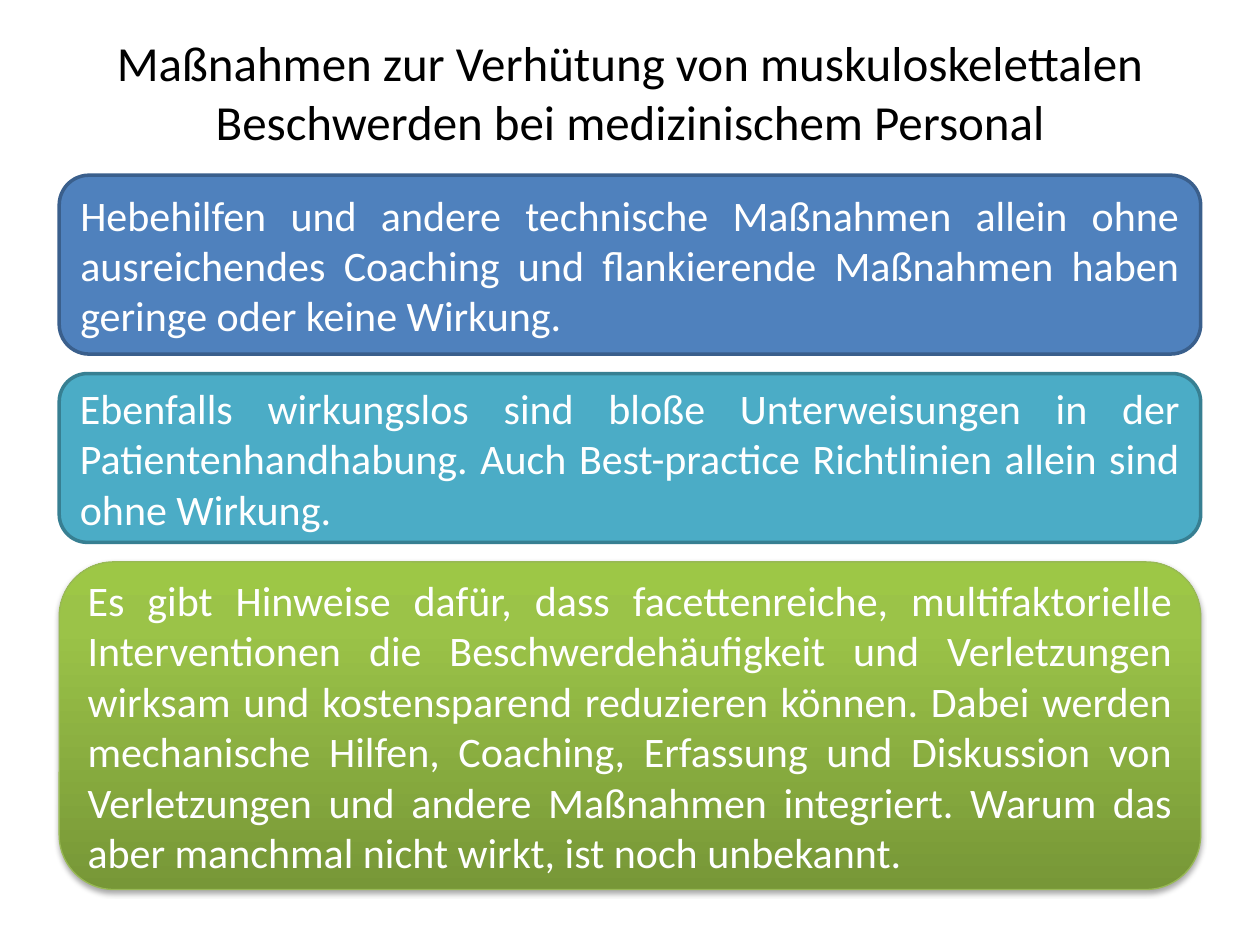
import pptx
import pptx.util
import pptx.dml.color
import pptx.enum.shapes
import pptx.enum.text
import pptx.oxml
import pptx.oxml.ns
from pptx.util import Inches

# Content
TITLE = "Maßnahmen zur Verhütung von muskuloskelettalen Beschwerden bei medizinischem Personal"
PANELS = [
    dict(text="Hebehilfen und andere technische Maßnahmen allein ohne ausreichendes Coaching "
              "und flankierende Maßnahmen haben geringe oder keine Wirkung.",
         height=1.42, fill="4F81BD", line="3A5F8C", width=2),
    dict(text="Ebenfalls wirkungslos sind bloße Unterweisungen in der Patientenhandhabung. "
              "Auch Best-practice Richtlinien allein sind ohne Wirkung.",
         height=1.34, fill="4BACC6", line="377F92", width=2),
    dict(text="Es gibt Hinweise dafür, dass facettenreiche, multifaktorielle Interventionen "
              "die Beschwerdehäufigkeit und Verletzungen wirksam und kostensparend reduzieren "
              "können. Dabei werden mechanische Hilfen, Coaching, Erfassung und Diskussion von "
              "Verletzungen und andere Maßnahmen integriert. Warum das aber manchmal nicht "
              "wirkt, ist noch unbekannt.",
         height=2.6, fill=[(0, "779737"), (80, "9BC348"), (100, "9DC746")],
         line="98B955", width=0.75, shadow=True),
]
LEFT, TOP, WIDTH, GAP = 0.47, 1.39, 9.06, 0.155


def color(value):
    return pptx.dml.color.RGBColor.from_string(value)


def write_text(shape, text, size, font_color, align):
    frame = shape.text_frame
    frame.word_wrap = True
    frame.auto_size = pptx.enum.text.MSO_AUTO_SIZE.NONE
    frame.vertical_anchor = pptx.enum.text.MSO_ANCHOR.MIDDLE
    paragraph = frame.paragraphs[0]
    paragraph.alignment = align
    run = paragraph.add_run()
    run.text = text
    run.font.name = "Calibri"
    run.font.size = pptx.util.Pt(size)
    run.font.color.rgb = color(font_color)


def fill_gradient(shape, stops):
    shape.fill.gradient()
    shape.fill.gradient_angle = 90
    stop_list = shape.element.spPr.find(".//" + pptx.oxml.ns.qn("a:gsLst"))
    for stop in list(stop_list):
        stop_list.remove(stop)
    for position, value in stops:
        stop_list.append(pptx.oxml.parse_xml(
            f'<a:gs {pptx.oxml.ns.nsdecls("a")} pos="{position * 1000}">'
            f'<a:srgbClr val="{value}"/></a:gs>'))


def add_shadow(shape):
    effects = shape.element.spPr.find(pptx.oxml.ns.qn("a:effectLst"))
    effects.append(pptx.oxml.parse_xml(
        f'<a:outerShdw {pptx.oxml.ns.nsdecls("a")} blurRad="{pptx.util.Pt(3.1)}" '
        f'dist="{pptx.util.Pt(1.8)}" dir="5400000" rotWithShape="0">'
        '<a:srgbClr val="000000"><a:alpha val="35000"/></a:srgbClr></a:outerShdw>'))


def add_panel(slide, panel, top):
    shape = slide.shapes.add_shape(
        pptx.enum.shapes.MSO_SHAPE.ROUNDED_RECTANGLE,
        Inches(LEFT), Inches(top), Inches(WIDTH), Inches(panel["height"]))
    shape.shadow.inherit = False
    if isinstance(panel["fill"], list):
        fill_gradient(shape, panel["fill"])
    else:
        shape.fill.solid()
        shape.fill.fore_color.rgb = color(panel["fill"])
    shape.line.color.rgb = color(panel["line"])
    shape.line.width = pptx.util.Pt(panel["width"])
    if panel.get("shadow"):
        add_shadow(shape)
    write_text(shape, panel["text"], size=24, font_color="FFFFFF",
               align=pptx.enum.text.PP_ALIGN.JUSTIFY)


def main():
    presentation = pptx.Presentation()
    presentation.slide_width, presentation.slide_height = Inches(10), Inches(7.5)
    slide = presentation.slides.add_slide(presentation.slide_layouts[5])

    # Title
    title = slide.shapes.title
    title.left, title.top = Inches(0.5), Inches(0.3)
    title.width, title.height = Inches(9), Inches(0.85)
    write_text(title, TITLE, size=28, font_color="000000",
               align=pptx.enum.text.PP_ALIGN.CENTER)

    # Stacked panels
    top = TOP
    for panel in PANELS:
        add_panel(slide, panel, top)
        top += panel["height"] + GAP

    presentation.save("out.pptx")


if __name__ == "__main__":
    main()
